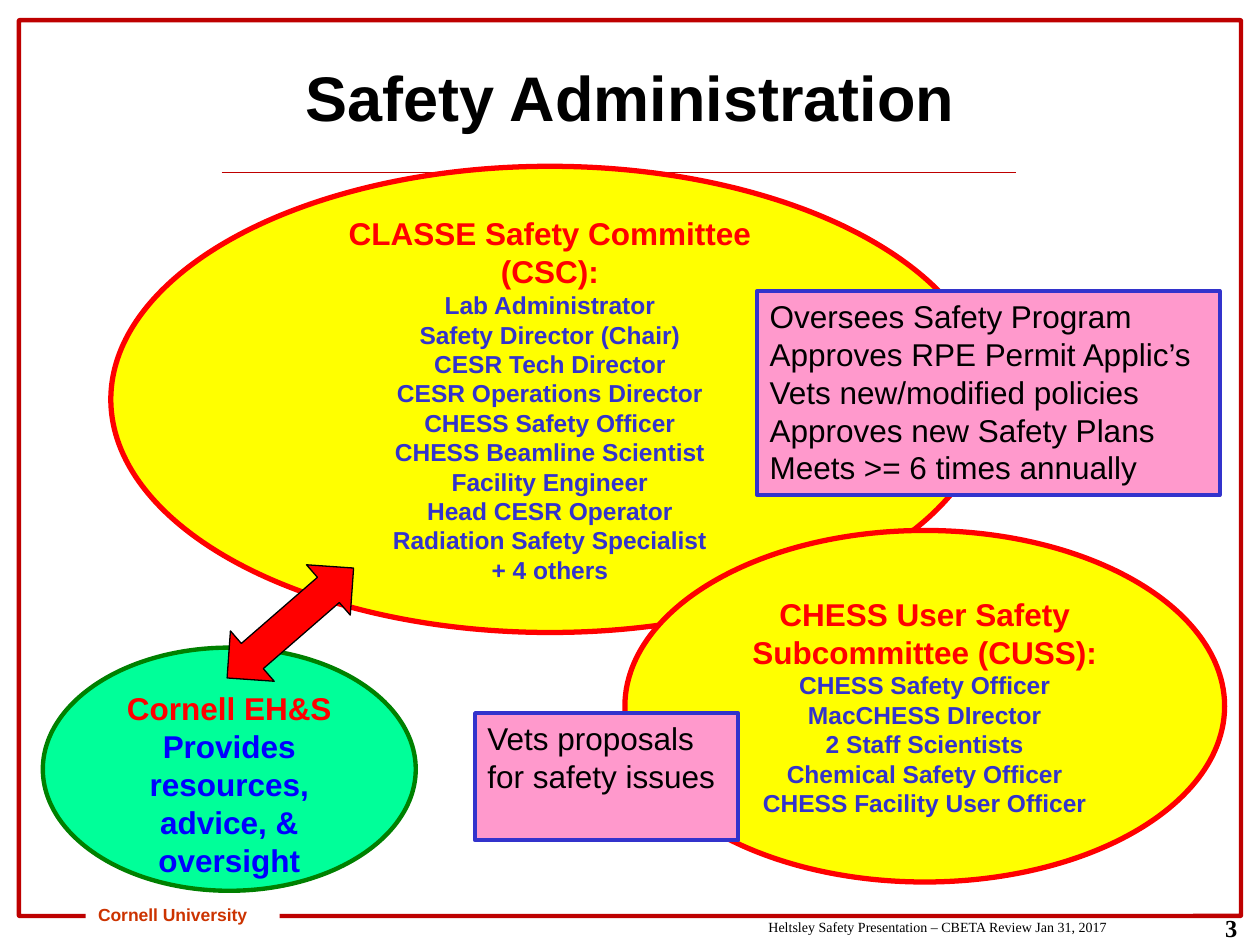
from dataclasses import dataclass

import pptx
import pptx.dml.color
import pptx.enum.shapes
import pptx.enum.text
import pptx.oxml.ns
import pptx.util
from lxml import etree

ALIGN = pptx.enum.text.PP_ALIGN
ANCHOR = pptx.enum.text.MSO_ANCHOR
SHAPE = pptx.enum.shapes.MSO_SHAPE
COLUMNS, ROWS = 100, 75


@dataclass(frozen=True)
class Theme:
    sans: str = "Arial"
    serif: str = "Times New Roman"
    black: str = "000000"
    white: str = "FFFFFF"
    frame: str = "BE0000"
    footer: str = "CC3300"
    red: str = "FF0000"
    yellow: str = "FFFF00"
    pink: str = "FF99CC"
    indigo: str = "3333CC"
    blue: str = "0000FF"
    mint: str = "00FF99"
    green: str = "008000"
    title_size: int = 36
    heading_size: int = 18
    list_size: int = 14
    footer_size: int = 10
    credit_size: int = 8


THEME = Theme()


def font_format(size, color, bold=True, name=THEME.sans):
    return {"size": pptx.util.Pt(size), "color": color, "bold": bold, "name": name}


HEADING = font_format(THEME.heading_size, THEME.red)
MEMBER = font_format(THEME.list_size, THEME.indigo)
ADVICE = font_format(THEME.heading_size, THEME.blue)
DUTY = font_format(THEME.heading_size, THEME.black, bold=False)


def rgb(color):
    return pptx.dml.color.RGBColor.from_string(color)


def across(columns):
    return pptx.util.Inches(10 * columns / COLUMNS)


def down(rows):
    return pptx.util.Inches(7.5 * rows / ROWS)


def grid_box(left, top, width, height):
    return across(left), down(top), across(width), down(height)


def set_values(target, values):
    for name, value in values.items():
        setattr(target, name, value)


def write(shape, groups, align=ALIGN.CENTER, anchor=ANCHOR.TOP, **frame_values):
    frame = shape.text_frame
    set_values(frame, {"word_wrap": True, "vertical_anchor": anchor,
                       "auto_size": pptx.enum.text.MSO_AUTO_SIZE.NONE, **frame_values})
    entries = [(line, style) for style, lines in groups for line in lines]
    for index, (line, style) in enumerate(entries):
        paragraph = frame.paragraphs[0] if index == 0 else frame.add_paragraph()
        paragraph.text = line
        paragraph.alignment = align
        for name, value in style.items():
            if name == "color":
                paragraph.font.color.rgb = rgb(value)
            else:
                setattr(paragraph.font, name, value)


def add_outlined(slide, kind, box, fill=None, line=None, width=1):
    shape = slide.shapes.add_shape(kind, *grid_box(*box))
    shape.shadow.inherit = False
    if fill:
        shape.fill.solid()
        shape.fill.fore_color.rgb = rgb(fill)
    else:
        shape.fill.background()
    if line:
        shape.line.color.rgb = rgb(line)
        shape.line.width = pptx.util.Pt(width)
    else:
        shape.line.fill.background()
    return shape


def add_label(slide, box, text, style, align):
    label = slide.shapes.add_textbox(*grid_box(*box))
    write(label, [(style, [text])], align)


def add_committee(slide, box, headings, members):
    ellipse = add_outlined(slide, SHAPE.OVAL, box, THEME.yellow, THEME.red, 3)
    write(ellipse, [(HEADING, headings), (MEMBER, members)], anchor=ANCHOR.MIDDLE)


def add_duties(slide, box, duties):
    panel = add_outlined(slide, SHAPE.RECTANGLE, box, THEME.pink, THEME.indigo, 2.25)
    write(panel, [(DUTY, duties)], ALIGN.LEFT)


def add_rule(slide, left, right, row):
    rule = slide.shapes.add_connector(
        pptx.enum.shapes.MSO_CONNECTOR.STRAIGHT,
        across(left), down(row), across(right), down(row))
    rule.line.color.rgb = rgb(THEME.frame)
    rule.line.width = pptx.util.Pt(1)
    etree.SubElement(rule._element.spPr, pptx.oxml.ns.qn("a:effectLst"))


def add_page_furniture(slide):
    border = add_outlined(slide, SHAPE.ROUNDED_RECTANGLE, (1.5, 1.6, 97, 71.1),
                          line=THEME.frame, width=2.5)
    border.adjustments[0] = 0.001
    add_label(slide, (60, 72.4, 30.9, 2.4),
              "Heltsley Safety Presentation – CBETA Review Jan 31, 2017",
              font_format(THEME.credit_size, THEME.black, False, THEME.serif), ALIGN.LEFT)
    add_rule(slide, 17.6, 80.6, 13.7)
    university = add_outlined(slide, SHAPE.RECTANGLE, (6.8, 71.9, 15.4, 1.7), THEME.white)
    write(university, [(font_format(THEME.footer_size, THEME.footer), ["Cornell University"])],
          ALIGN.LEFT, margin_top=down(0.2), margin_bottom=down(0.2))
    university.text_frame.paragraphs[0].line_spacing = 0.75
    add_label(slide, (94.5, 72, 4.7, 3), "3",
              font_format(THEME.list_size, THEME.black, name=THEME.serif), ALIGN.RIGHT)


def add_title(slide, text):
    title = slide.shapes.title
    left, top, width, height = grid_box(5, 3.9, 90, 7.5)
    set_values(title, {"left": left, "top": top, "width": width, "height": height})
    write(title, [(font_format(THEME.title_size, THEME.black), [text])], anchor=ANCHOR.MIDDLE)


def main():
    presentation = pptx.Presentation()
    presentation.slide_width = across(COLUMNS)
    presentation.slide_height = down(ROWS)
    slide = presentation.slides.add_slide(presentation.slide_layouts[5])
    add_page_furniture(slide)
    add_title(slide, "Safety Administration")
    add_committee(slide, (8.8, 13.2, 69.7, 37), ["CLASSE Safety Committee", "(CSC):"], [
        "Lab Administrator", "Safety Director (Chair)", "CESR Tech Director",
        "CESR Operations Director", "CHESS Safety Officer", "CHESS Beamline Scientist",
        "Facility Engineer", "Head CESR Operator", "Radiation Safety Specialist",
        "+ 4 others"])
    add_committee(slide, (49.6, 42.1, 47.6, 27.9), ["CHESS User Safety Subcommittee (CUSS):"], [
        "CHESS Safety Officer", "MacCHESS DIrector", "2 Staff Scientists",
        "Chemical Safety Officer", "CHESS Facility User Officer"])
    add_duties(slide, (60.1, 23.1, 36.7, 16.2), [
        "Oversees Safety Program", "Approves RPE Permit Applic’s",
        "Vets new/modified policies", "Approves new Safety Plans",
        "Meets >= 6 times annually"])
    add_duties(slide, (37.7, 56.6, 20.9, 10.1), ["Vets proposals for safety issues"])
    adviser = add_outlined(slide, SHAPE.OVAL, (3.4, 51.4, 29.6, 19.3),
                           THEME.mint, THEME.green, 2.5)
    write(adviser, [(HEADING, ["Cornell EH&S"]),
                    (ADVICE, ["Provides resources, advice, & oversight"])])
    exchange = add_outlined(slide, SHAPE.LEFT_RIGHT_ARROW, (16.4, 46.8, 13.3, 5.3),
                            THEME.red, THEME.black, 0.75)
    exchange.rotation = 319
    presentation.save("out.pptx")


if __name__ == "__main__":
    main()
